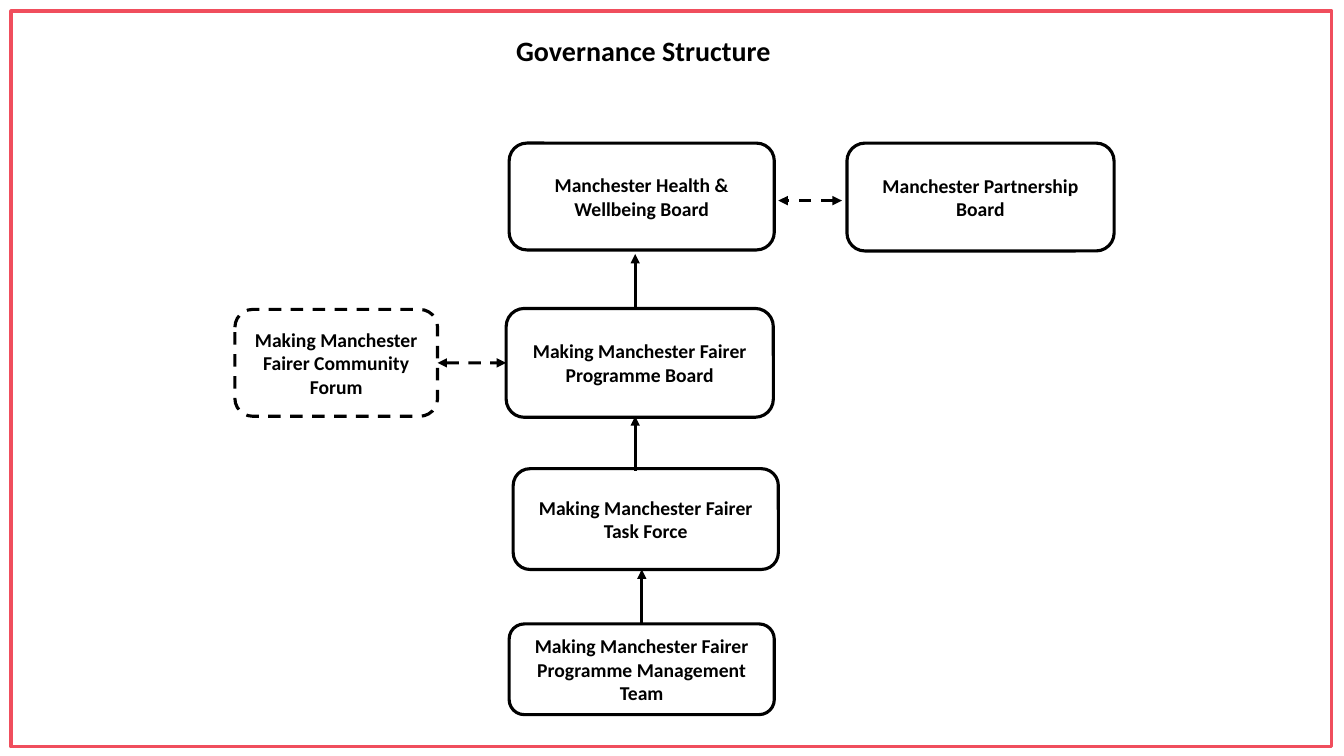
import pptx
import pptx.util
import pptx.dml.color
import pptx.enum.dml
import pptx.enum.shapes
import pptx.enum.text
from dataclasses import dataclass
from lxml import etree

Inches = pptx.util.Inches
Pt = pptx.util.Pt
Kind = pptx.enum.shapes.MSO_SHAPE
Color = pptx.dml.color.RGBColor.from_string
TOP, LEFT, RIGHT = 0, 1, 3


@dataclass(frozen=True)
class Theme:
    ink: str = "000000"
    paper: str = "FFFFFF"
    edge: str = "F04E5D"
    font: str = "Calibri"
    title: int = 20
    label: int = 14
    line: float = 2.25


THEME = Theme()


def stroke(line, color, dash=False):
    line.color.rgb = Color(color)
    line.width = Pt(THEME.line)
    if dash:
        line.dash_style = pptx.enum.dml.MSO_LINE.DASH


def write(frame, text, size):
    frame.word_wrap = True
    run = frame.paragraphs[0].add_run()
    run.text = text
    run.font.name = THEME.font
    run.font.size = Pt(size)
    run.font.bold = True
    run.font.color.rgb = Color(THEME.ink)


def add_title(slide, box, text):
    area = slide.shapes.add_textbox(*map(Inches, box))
    write(area.text_frame, text, THEME.title)


def add_frame(slide, box):
    frame = slide.shapes.add_shape(Kind.RECTANGLE, *map(Inches, box))
    frame.shadow.inherit = False
    frame.fill.background()
    stroke(frame.line, THEME.edge)


def add_group(slide, box, text, dash=False):
    """Add one rounded box that names a governance body."""
    shape = slide.shapes.add_shape(Kind.ROUNDED_RECTANGLE, *map(Inches, box))
    shape.shadow.inherit = False
    shape.fill.solid()
    shape.fill.fore_color.rgb = Color(THEME.paper)
    stroke(shape.line, THEME.ink, dash)
    frame = shape.text_frame
    frame.vertical_anchor = pptx.enum.text.MSO_ANCHOR.MIDDLE
    frame.paragraphs[0].alignment = pptx.enum.text.PP_ALIGN.CENTER
    write(frame, text, THEME.label)
    return shape


def add_arrow(slide, start, end, both=False):
    """Add an arrow; one with two heads is dashed."""
    link = slide.shapes.add_connector(
        pptx.enum.shapes.MSO_CONNECTOR.STRAIGHT, *map(Inches, start + end))
    stroke(link.line, THEME.ink, both)
    line = link.line._get_or_add_ln()
    for tag in ("headEnd", "tailEnd") if both else ("tailEnd",):
        etree.SubElement(line, pptx.oxml.ns.qn(f"a:{tag}"), type="triangle")
    etree.SubElement(link._element.spPr, pptx.oxml.ns.qn("a:effectLst"))
    return link


def add_chain(slide, box):
    """Add the reporting chain, with the two bodies at its sides."""
    x, y, width, height = box
    team = add_group(slide, (x + 0.03, y + 4.77, 2.63, 0.9),
                     "Making Manchester Fairer Programme Management Team")
    add_group(slide, (x + 0.07, y + 3.23, 2.63, 1),
              "Making Manchester Fairer Task Force")
    board = add_group(slide, (x, y + 1.64, width, 1.08),
                      "Making Manchester Fairer Programme Board")
    add_group(slide, (x + 0.03, y, 2.63, 1.06),
              "Manchester Health & Wellbeing Board")
    add_group(slide, (x + 3.38, y, width, 1.07),
              "Manchester Partnership Board")
    forum = add_group(slide, (x - 2.69, y + 1.65, 2.01, 1.06),
                      "Making Manchester Fairer Community Forum", dash=True)

    level = y + 2.18
    link = add_arrow(slide, (x - 0.68, level), (x, level), both=True)
    link.begin_connect(forum, RIGHT)
    link.end_connect(board, LEFT)
    add_arrow(slide, (x + 3.33, y + 0.57), (x + 2.7, y + 0.57), both=True)

    rise = 0.54
    for across, down, source in ((1.345, 4.77, team), (1.28, 3.25, None),
                                 (1.28, 1.64, None)):
        link = add_arrow(slide, (x + across, y + down),
                         (x + across, y + down - rise))
        if source:
            link.begin_connect(source, TOP)


def main():
    deck = pptx.Presentation()
    deck.slide_width = Inches(13.33)
    deck.slide_height = Inches(7.5)
    slide = deck.slides.add_slide(deck.slide_layouts[6])
    add_chain(slide, (5.02, 1.42, 2.65, 5.67))
    add_frame(slide, (0.11, 0.11, 13.1, 7.3))
    add_title(slide, (5.02, 0.28, 3.39, 0.44), "Governance Structure")
    deck.save("out.pptx")


if __name__ == "__main__":
    main()
